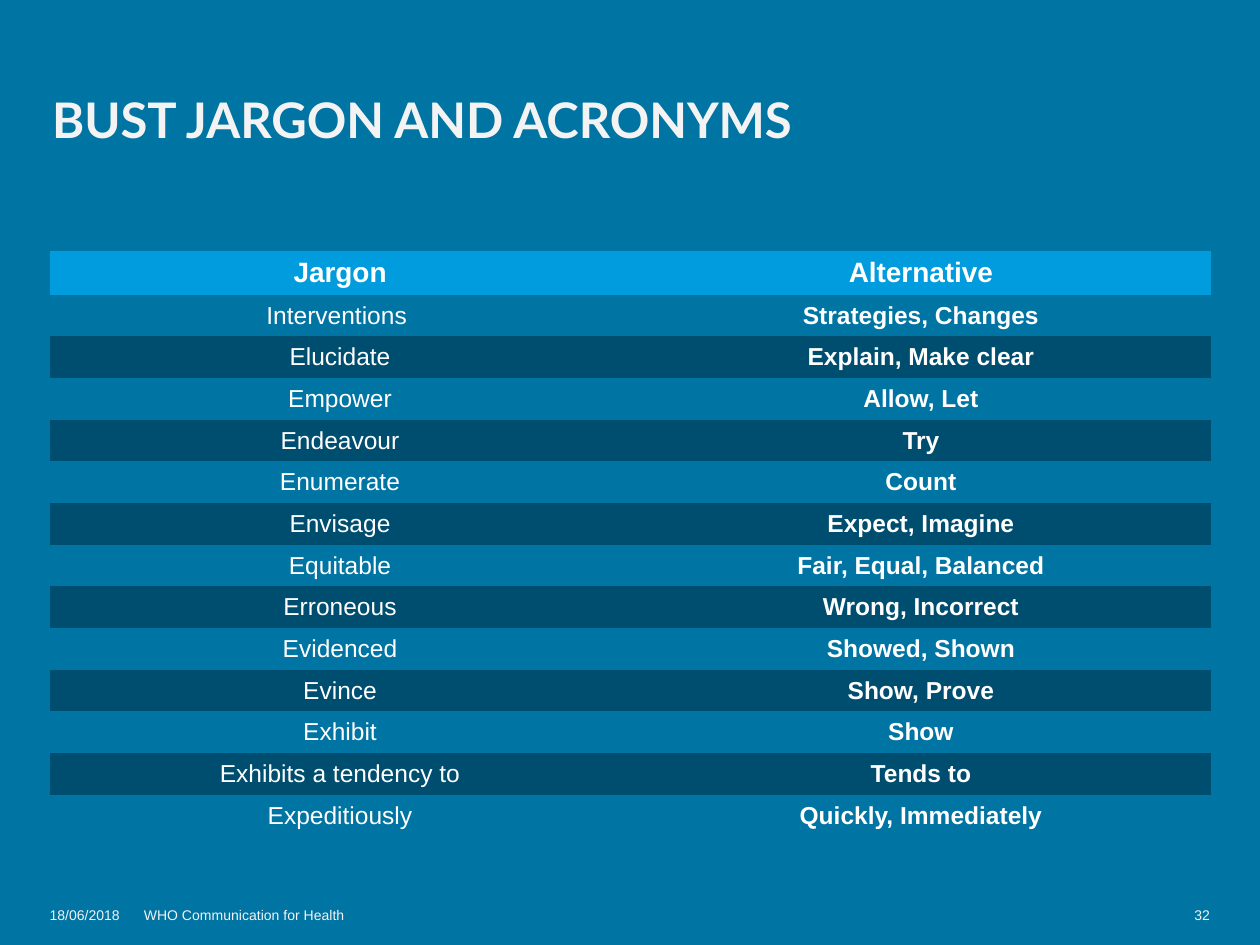
from pptx import Presentation
from pptx.dml.color import RGBColor
from pptx.enum import text as t
from pptx.util import Cm, Pt

BLUE = RGBColor(0x00, 0x74, 0xA2)
SKY = RGBColor(0x00, 0x9C, 0xDE)
NAVY = RGBColor(0x00, 0x4E, 0x6F)
WHITE = RGBColor(0xFF, 0xFF, 0xFF)
PALE = RGBColor(0xF3, 0xF3, 0xF3)
PLAIN = "{2D5ABB26-0587-4C30-8999-92F81FD0307C}"  # no style, no grid

ROWS = [
    ("Jargon", "Alternative"),
    ("Interventions ", "Strategies, Changes"),
    ("Elucidate", "Explain, Make clear"),
    ("Empower", "Allow, Let"),
    ("Endeavour", "Try"),
    ("Enumerate", "Count"),
    ("Envisage", "Expect, Imagine"),
    ("Equitable", "Fair, Equal, Balanced"),
    ("Erroneous", "Wrong, Incorrect"),
    ("Evidenced", "Showed, Shown"),
    ("Evince", "Show, Prove"),
    ("Exhibit", "Show"),
    ("Exhibits a tendency to", "Tends to"),
    ("Expeditiously", "Quickly, Immediately"),
]


def write(frame, words, size=8, face="Arial", color=PALE, bold=False,
          align=t.PP_ALIGN.LEFT):
    para = frame.paragraphs[0]
    para.alignment = align
    run = para.add_run()
    run.text = words
    run.font.size = Pt(size)
    run.font.name = face
    run.font.color.rgb = color
    run.font.bold = bold
    return para


def inset(box, left=0, top=0, right=0, bottom=0):
    box.margin_left, box.margin_top = Cm(left), Cm(top)
    box.margin_right, box.margin_bottom = Cm(right), Cm(bottom)


deck = Presentation()
deck.slide_width, deck.slide_height = Cm(25.4), Cm(19.05)
slide = deck.slides.add_slide(deck.slide_layouts[5])
slide.background.fill.solid()
slide.background.fill.fore_color.rgb = BLUE

# Title
title = slide.shapes.title
title.left, title.top, title.width, title.height = Cm(1), Cm(1), Cm(17), Cm(2)
frame = title.text_frame
frame.word_wrap = True
frame.auto_size = t.MSO_AUTO_SIZE.NONE
frame.vertical_anchor = t.MSO_ANCHOR.BOTTOM
inset(frame, left=0.05, right=1)
head = write(frame, "BUST JARGON AND ACRONYMS", size=28, face="Lato", bold=True)
head.line_spacing = 0.9

# Jargon table
table = slide.shapes.add_table(len(ROWS), 2, Cm(1), Cm(5.06),
                               Cm(23.42), Cm(11.8)).table
table.first_row = table.horz_banding = False
table._tbl.tblPr[0].text = PLAIN
for col in table.columns:
    col.width = Cm(11.71)
for i, words in enumerate(ROWS):
    table.rows[i].height = Cm(0.84 if i else 0.88)
    for j, word in enumerate(words):
        cell = table.cell(i, j)
        inset(cell, 0.2, 0.1, 0.2, 0.1)
        cell.vertical_anchor = t.MSO_ANCHOR.MIDDLE
        if i % 2:
            cell.fill.background()
        else:
            cell.fill.solid()
            cell.fill.fore_color.rgb = NAVY if i else SKY
        write(cell.text_frame, word, size=14 if i else 16, color=WHITE,
              bold=i == 0 or j == 1, align=t.PP_ALIGN.CENTER)

# Footer
for words, left, width, align in [
    ("18/06/2018", 1, 1.65, t.PP_ALIGN.LEFT),
    ("WHO Communication for Health", 2.9, 9.86, t.PP_ALIGN.LEFT),
    ("32", 23.78, 0.61, t.PP_ALIGN.RIGHT),
]:
    frame = slide.shapes.add_textbox(Cm(left), Cm(18.28), Cm(width),
                                     Cm(0.5)).text_frame
    frame.word_wrap = True
    inset(frame)
    write(frame, words, align=align)

deck.save("out.pptx")
